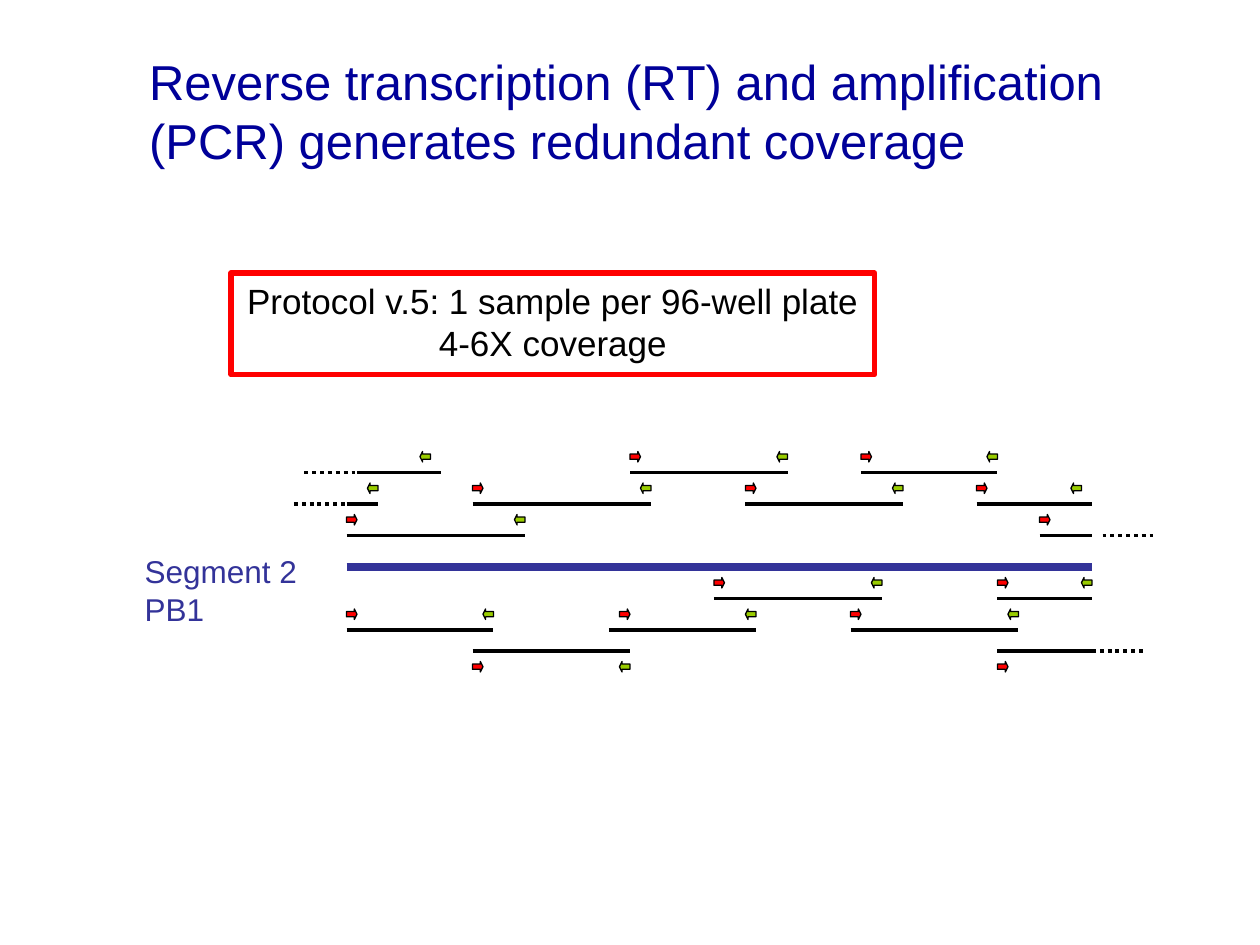
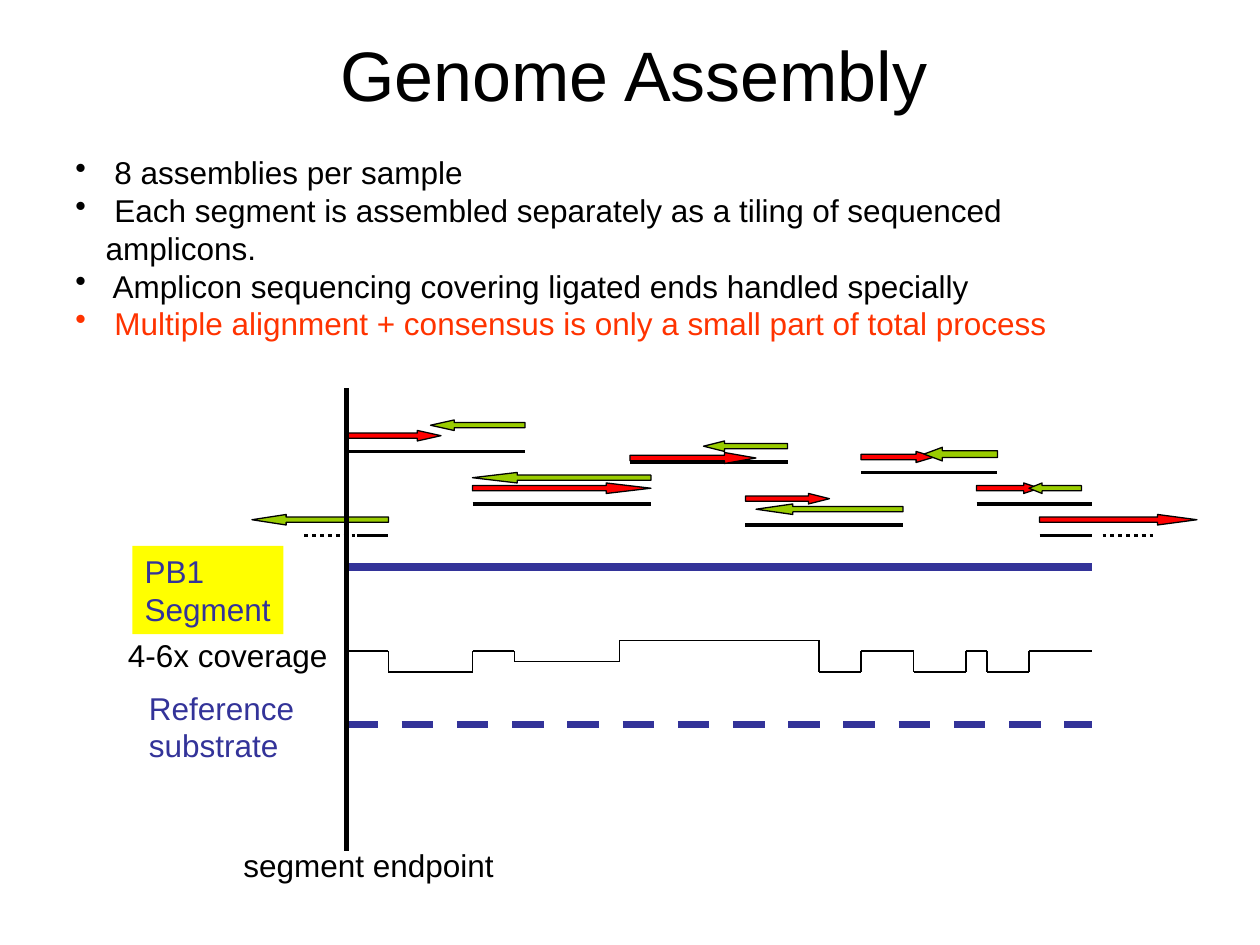
"""Build two slides on tiled amplicon coverage and genome assembly."""
from lxml import etree
from pptx import Presentation
from pptx.dml.color import RGBColor
from pptx.enum.dml import MSO_LINE
from pptx.enum.shapes import MSO_CONNECTOR, MSO_SHAPE
from pptx.enum.text import MSO_ANCHOR, MSO_AUTO_SIZE, PP_ALIGN
from pptx.oxml.ns import qn
from pptx.util import Inches, Pt

RECT, RIGHT, LEFT = MSO_SHAPE.RECTANGLE, MSO_SHAPE.RIGHT_ARROW, MSO_SHAPE.LEFT_ARROW
DOT, DASH = MSO_LINE.ROUND_DOT, MSO_LINE.DASH
ALIGN_LEFT, CENTER = PP_ALIGN.LEFT, PP_ALIGN.CENTER
TOP, MIDDLE = MSO_ANCHOR.TOP, MSO_ANCHOR.MIDDLE
FONT = "Arial"
COLORS = {name: RGBColor.from_string(value) for name, value in {
    "black": "000000", "title": "000099", "segment": "333399", "forward": "FF0000",
    "reverse": "99CC00", "label": "FFFF00", "accent": "FF3300"}.items()}
CELL = Inches(1) // 12
SEGMENT_START, SEGMENT_END, SEGMENT_ROW = 33, 104, 54


def put_text(sp, text, size=18, color="black", align=ALIGN_LEFT, anchor=TOP, wrap=False):
    tf = sp.text_frame
    tf.word_wrap = wrap
    tf.auto_size = MSO_AUTO_SIZE.NONE
    tf.vertical_anchor = anchor
    tf.text = text
    for p in tf.paragraphs:
        p.alignment = align
        for r in p.runs:
            r.font.name, r.font.size = FONT, Pt(size)
            r.font.color.rgb = COLORS[color]
    return tf


def add_line(s, x1, y1, x2, y2, width=2.25, color="black", dash=None):
    ends = [round(v * CELL) for v in (x1, y1, x2, y2)]
    sp = s.shapes.add_connector(MSO_CONNECTOR.STRAIGHT, *ends)
    sp.line.width = Pt(width)
    sp.line.color.rgb = COLORS[color]
    if dash:
        sp.line.dash_style = dash
    etree.SubElement(sp._element.spPr, qn("a:effectLst"))


prs = Presentation()
prs.slide_width, prs.slide_height = 120 * CELL, 90 * CELL

titles = [
    ("Reverse transcription (RT) and amplification (PCR) generates redundant coverage",
     (13, 3, 94, 15), dict(size=28, color="title")),
    ("Genome Assembly", (6, 3.6, 108.7, 6.8), dict(size=40, align=CENTER)),
]
slides = []
for text, box, style in titles:
    s = prs.slides.add_slide(prs.slide_layouts[5])
    sp = s.shapes.title
    sp.left, sp.top, sp.width, sp.height = [round(v * CELL) for v in box]
    put_text(sp, text, anchor=MIDDLE, wrap=True, **style)
    slides.append(s)
coverage, assembly = slides

# row, line start, line end, forward primer start, reverse primer end
amplicons = [
    (45, 34, 42, None, 41), (45, 60, 75, 60, 75), (45, 82, 95, 82, 95),
    (48, 33, 36, None, 36), (48, 45, 62, 45, 62), (48, 71, 86, 71, 86),
    (48, 93, 104, 93, 103), (51, 33, 50, 33, 50), (51, 99, 104, 99, None),
    (57, 68, 84, 68, 84), (57, 95, 104, 95, 104), (60, 33, 47, 33, 47),
    (60, 58, 72, 59, 72), (60, 81, 97, 81, 97), (62, 45, 60, 45, 60),
    (62, 95, 104, 95, None),
]
forward, reverse = [], []
for row, start, end, primer_start, primer_end in amplicons:
    add_line(coverage, start, row, end, row)
    primer_row = row + 1 if row == 62 else row - 2
    if primer_start is not None:
        forward.append((coverage, primer_start, primer_row, 1, 1))
    if primer_end is not None:
        reverse.append((coverage, primer_end - 1, primer_row, 1, 1))

for row, start, end in [(43, 33, 50), (44, 60, 75), (45, 82, 95), (48, 45, 62),
                        (48, 93, 104), (50, 71, 86), (51, 34, 37), (51, 99, 104)]:
    add_line(assembly, start, row, end, row)

for s, row, start in [(coverage, 45, 29), (coverage, 48, 28), (coverage, 51, 105),
                      (coverage, 62, 104), (assembly, 51, 29), (assembly, 51, 105)]:
    add_line(s, start, row, start + 5, row, dash=DOT)

for s in slides:
    add_line(s, SEGMENT_START, SEGMENT_ROW, SEGMENT_END, SEGMENT_ROW, 4.5, "segment")
add_line(assembly, SEGMENT_START, 69, SEGMENT_END, 69, 4.5, "segment", DASH)

forward += [(assembly, *read) for read in [
    (33, 41, 9, 1), (45, 46, 17, 1), (60, 43.1, 12, 1.05), (71, 47, 8, 1),
    (82, 43, 7, 1.05), (93, 46, 6, 1), (99, 49, 15, 1)]]
reverse += [(assembly, *read) for read in [
    (24, 49, 13, 1), (41, 40, 9, 1), (45, 45, 17, 1), (67, 42, 8, 1),
    (72, 48, 14, 1), (88, 42.6, 7, 1.3), (98, 46, 5, 1)]]
for preset, color, reads in [(RIGHT, "forward", forward), (LEFT, "reverse", reverse)]:
    for s, x, y, w, h in reads:
        sp = s.shapes.add_shape(preset, *[round(v * CELL) for v in (x, y, w, h)])
        sp.adjustments[0], sp.adjustments[1] = 0.5, w / h / 4
        sp.shadow.inherit = False
        sp.fill.solid()
        sp.fill.fore_color.rgb = COLORS[color]
        sp.line.color.rgb = COLORS["black"]
        sp.line.width = Pt(0.75)

step_cols = [33, 37, 45, 49, 59, 78, 82, 87, 92, 94, 98, 104]
step_rows = [62, 64, 62, 63, 61, 64, 62, 64, 62, 64, 62]
for i, row in enumerate(step_rows):
    add_line(assembly, step_cols[i], row, step_cols[i + 1], row, 0.75)
    if i:
        add_line(assembly, step_cols[i], step_rows[i - 1], step_cols[i], row, 0.75)
add_line(assembly, SEGMENT_START, 37, SEGMENT_START, 81, 3)

for s, text, box, color in [
        (coverage, "Segment 2\nPB1", (12.6, 52, 16.9, 8.4), "segment"),
        (assembly, "4-6x coverage", (11, 60, 21.5, 4.8), "black"),
        (assembly, "Reference\nsubstrate", (13, 65, 17, 8.4), "segment"),
        (assembly, "segment endpoint", (22, 80, 26.3, 4.8), "black")]:
    sp = s.shapes.add_textbox(*[round(v * CELL) for v in box])
    put_text(sp, text, color=color)

sp = coverage.shapes.add_shape(RECT, *[round(v * CELL) for v in (22, 26, 61.3, 9.7)])
sp.shadow.inherit = False
sp.fill.background()
sp.line.color.rgb = COLORS["forward"]
sp.line.width = Pt(3)
put_text(sp, "Protocol v.5: 1 sample per 96-well plate\n4-6X coverage", size=20, align=CENTER)

sp = assembly.shapes.add_shape(RECT, *[round(v * CELL) for v in (12.6, 52, 14.4, 8.4)])
sp.shadow.inherit = False
sp.fill.solid()
sp.fill.fore_color.rgb = COLORS["label"]
sp.line.fill.background()
put_text(sp, "PB1\nSegment", color="segment")

bullets = [
    " 8 assemblies per sample",
    " Each segment is assembled separately as a tiling of sequenced amplicons.",
    " Amplicon sequencing covering ligated ends handled specially",
    " Multiple alignment + consensus is only a small part of total process",
]
sp = assembly.shapes.add_textbox(*[round(v * CELL) for v in (6, 14, 104, 19.2)])
tf = put_text(sp, "\n".join(bullets), wrap=True)
for p in tf.paragraphs:
    pPr = p._p.get_or_add_pPr()
    pPr.set("marL", str(Inches(0.24)))
    pPr.set("indent", str(-Inches(0.24)))
    etree.SubElement(pPr, qn("a:buChar")).set("char", "•")
tf.paragraphs[-1].runs[0].font.color.rgb = COLORS["accent"]

prs.save("out.pptx")
